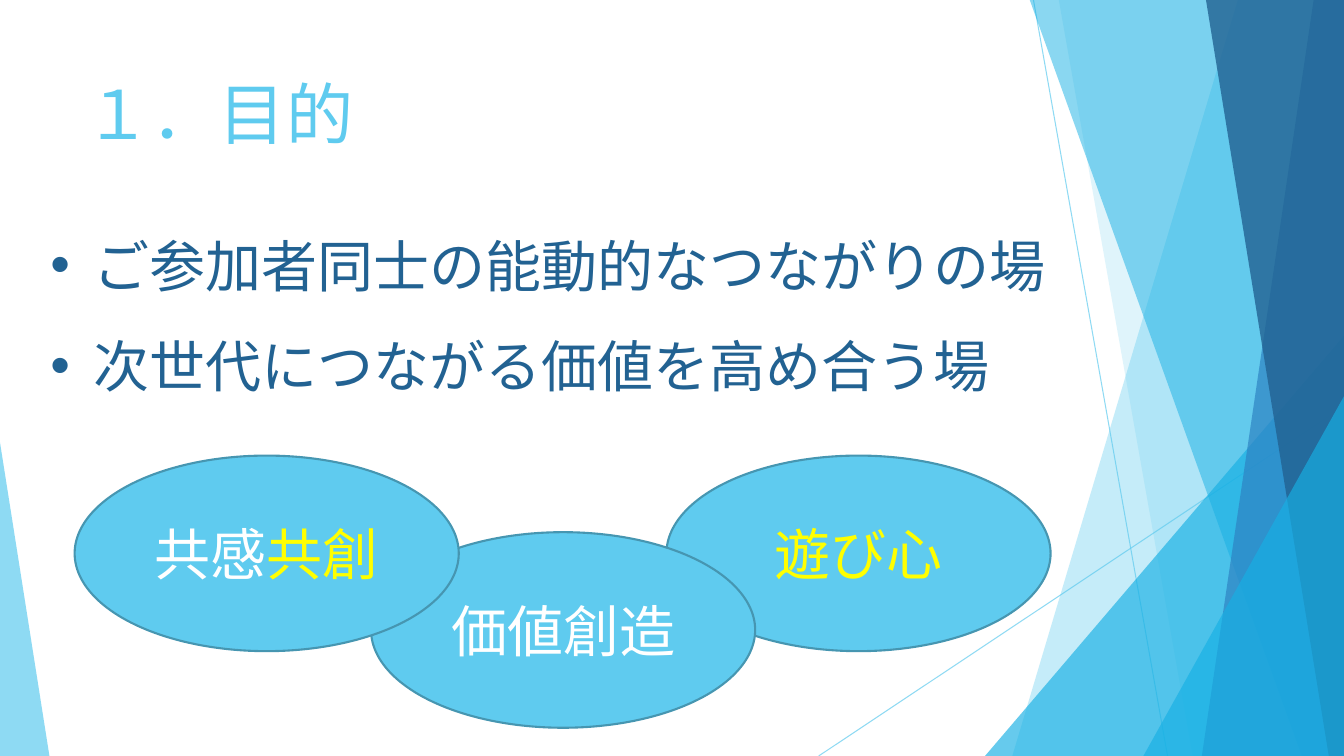
from dataclasses import dataclass

from pptx import Presentation
from pptx import util as u
from pptx.dml.color import RGBColor
from pptx.enum import shapes, text
from pptx.oxml import ns, xmlchemy

SKY = RGBColor(0x5F, 0xCB, 0xEF)
AQUA = RGBColor(0x17, 0xB0, 0xE4)
BLUE = RGBColor(0x2E, 0x83, 0xC3)
NAVY = RGBColor(0x22, 0x62, 0x92)
RIM = RGBColor(0x46, 0x96, 0xB1)
WHITE = RGBColor(0xFF, 0xFF, 0xFF)
YELLOW = RGBColor(0xFF, 0xFF, 0x00)

FACE = "Cabin"
WIDE, HIGH = 13.33, 7.5
TOP = -0.01


@dataclass
class Ray:
    start: tuple[float, float]
    end: tuple[float, float]


@dataclass
class Band:
    """A strip reaching the right edge; its left side runs from head to foot."""
    head: float
    foot: float
    color: RGBColor
    alpha: int


@dataclass
class Wedge:
    """A right triangle standing on the bottom edge."""
    left: float
    top: float
    width: float
    tip: float
    color: RGBColor
    alpha: int


@dataclass
class Oval:
    left: float
    top: float
    words: list[tuple[str, RGBColor]]


RAYS = [Ray((10.25, 0), (11.58, HIGH)), Ray((WIDE, 4.03), (8.12, HIGH))]
FACETS = [
    Band(12.28, 10.04, SKY, 36),
    Band(10.5, 11.83, SKY, 20),
    Wedge(9.77, 3.33, 3.56, 1, AQUA, 66),
    Band(10.21, 12.91, AQUA, 50),
    Band(13.03, 11.92, BLUE, 70),
    Band(11.96, 13.18, NAVY, 80),
    Wedge(11.34, 3.93, 1.99, 1, AQUA, 66),
    Wedge(0, 4.39, 0.49, 0, SKY, 70),
]
PLAY = Oval(6.61, 4.52, [("遊び心", YELLOW)])
VALUE = Oval(3.68, 5.28, [("価値創造", WHITE)])
SHARE = Oval(0.74, 4.52, [("共感", WHITE), ("共創", YELLOW)])
AIMS = [" ご参加者同士の能動的なつながりの場", " 次世代につながる価値を高め合う場"]


def add_tag(parent, tag: str, **attrs: str) -> None:
    node = xmlchemy.OxmlElement(tag)
    for key, value in attrs.items():
        node.set(key, value)
    parent.append(node)


def fade(shape, alpha: int) -> None:
    """Set the opacity, in percent, of every colour of the shape."""
    for color in shape.element.spPr.iter(ns.qn("a:srgbClr")):
        add_tag(color, "a:alpha", val=str(alpha * 1000))


def paint(shape, color: RGBColor) -> None:
    shape.shadow.inherit = False
    shape.fill.solid()
    shape.fill.fore_color.rgb = color


def draw_ray(slide, ray: Ray) -> None:
    ends = [u.Inches(n) for n in ray.start + ray.end]
    line = slide.shapes.add_connector(shapes.MSO_CONNECTOR.STRAIGHT, *ends)
    line.line.color.rgb = SKY
    line.line.width = u.Pt(0.75)
    fade(line, 70)
    add_tag(line.element.spPr, "a:effectLst")


def draw_facet(slide, facet: Band | Wedge) -> None:
    if isinstance(facet, Band):
        edge = [(WIDE, TOP), (WIDE, HIGH), (facet.foot, HIGH)]
        path = slide.shapes.build_freeform(u.Inches(facet.head), u.Inches(TOP))
        path.add_line_segments([(u.Inches(x), u.Inches(y)) for x, y in edge])
        shape = path.convert_to_shape()
    else:
        shape = slide.shapes.add_shape(
            shapes.MSO_SHAPE.ISOSCELES_TRIANGLE,
            u.Inches(facet.left), u.Inches(facet.top),
            u.Inches(facet.width), u.Inches(HIGH - facet.top))
        shape.adjustments[0] = facet.tip
    paint(shape, facet.color)
    shape.line.fill.background()
    fade(shape, facet.alpha)


def set_font(para, size: int) -> None:
    para.font.name = FACE
    para.font.size = u.Pt(size)


def draw_oval(slide, oval: Oval) -> None:
    shape = slide.shapes.add_shape(
        shapes.MSO_SHAPE.OVAL, u.Inches(oval.left), u.Inches(oval.top),
        u.Inches(3.81), u.Inches(1.94))
    paint(shape, SKY)
    shape.line.color.rgb = RIM
    shape.line.width = u.Pt(1.5)
    shape.text_frame.vertical_anchor = text.MSO_ANCHOR.MIDDLE
    para = shape.text_frame.paragraphs[0]
    para.alignment = text.PP_ALIGN.CENTER
    set_font(para, 40)
    for word, color in oval.words:
        run = para.add_run()
        run.text = word
        run.font.color.rgb = color


def add_box(slide, left: float, top: float, width: float, height: float):
    box = slide.shapes.add_textbox(
        u.Inches(left), u.Inches(top), u.Inches(width), u.Inches(height))
    box.text_frame.word_wrap = True
    return box.text_frame


def draw_title(slide) -> None:
    para = add_box(slide, 0.74, 0.67, 9.4, 1.44).paragraphs[0]
    para.text = "１．目的"
    set_font(para, 48)
    para.font.color.rgb = SKY


def draw_aims(slide) -> None:
    frame = add_box(slide, 0.4, 1.91, 10.52, 2.12)
    frame.auto_size = text.MSO_AUTO_SIZE.SHAPE_TO_FIT_TEXT
    frame.text = "\n".join(AIMS)
    indent = u.Inches(0.31)
    for para in frame.paragraphs:
        para.line_spacing = 1.5
        props = para._p.get_or_add_pPr()
        props.set("marL", str(indent))
        props.set("indent", str(-indent))
        add_tag(props, "a:buFont", typeface="Arial")
        add_tag(props, "a:buChar", char="•")
        set_font(para, 40)
        para.font.color.rgb = NAVY


def main() -> None:
    deck = Presentation()
    deck.slide_width, deck.slide_height = u.Inches(WIDE), u.Inches(HIGH)
    slide = deck.slides.add_slide(deck.slide_layouts[6])
    for ray in RAYS:
        draw_ray(slide, ray)
    for facet in FACETS:
        draw_facet(slide, facet)
    draw_oval(slide, PLAY)
    draw_title(slide)
    draw_aims(slide)
    for oval in (VALUE, SHARE):
        draw_oval(slide, oval)
    deck.save("out.pptx")


if __name__ == "__main__":
    main()
